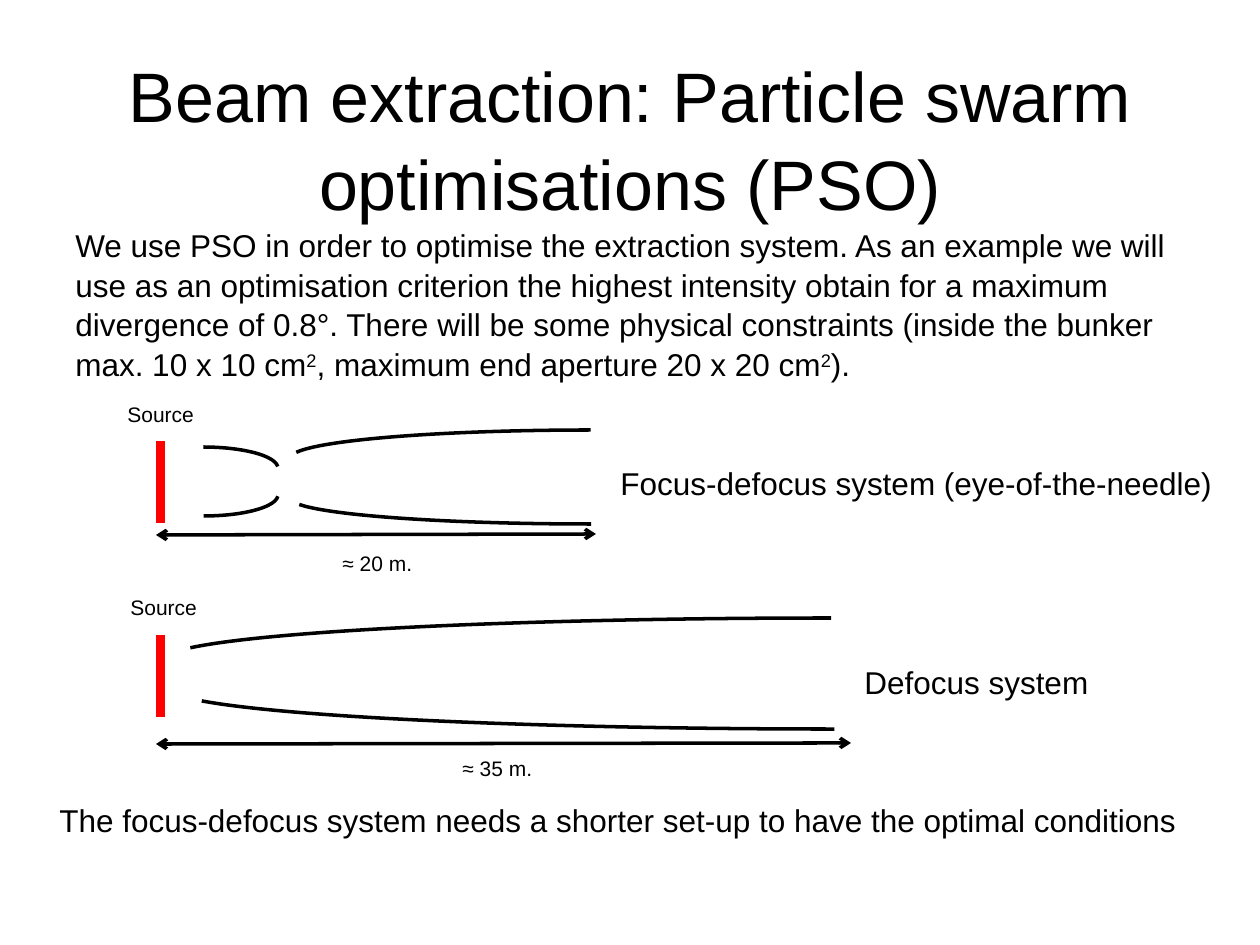
from lxml import etree
from pptx import Presentation, util as u
from pptx.dml.color import RGBColor
from pptx.enum import shapes, text
from pptx.oxml.ns import qn

PX = 914400 / 126
BLACK, WHITE, RED = "000000", "FFFFFF", "FF0000"

TITLE = "Beam extraction: Particle swarm optimisations (PSO)"
# (wording, is superscript)
INTRO = [
    ("We use PSO in order to optimise the extraction system. As an example we will "
     "use as an optimisation criterion the highest intensity obtain for a maximum "
     "divergence of 0.8°. There will be some physical constraints (inside the bunker "
     "max. 10 x 10 cm", False),
    ("2", True),
    (", maximum end aperture 20 x 20 cm", False),
    ("2", True),
    (").", False),
]
CONCLUSION = "The focus-defocus system needs a shorter set-up to have the optimal conditions"

# Boxes are left, top, width, height in px. A guide wall is the box of its
# ellipse, whether it is the upper wall, and whether it opens away from the source.
SYSTEMS = [
    dict(source=(156, 441, 9, 82), source_label=(115, 394, 93, 38),
         walls=[((129, 447, 149, 42), True, False),
                ((129, 474, 149, 42), False, False),
                ((291, 473, 600, 51), False, True),
                ((291, 430, 600, 55), True, True)],
         span=(156, 535, 596, 534),
         length="≈ 20 m.", length_box=(330, 543, 96, 38),
         name="Focus-defocus system (eye-of-the-needle)", name_box=(608, 456, 628, 51)),
    dict(source=(156, 635, 9, 82), source_label=(118, 587, 93, 38),
         walls=[((168, 647, 1333, 82), False, True),
                ((165, 618, 1333, 82), True, True)],
         span=(156, 744, 851, 743),
         length="≈ 35 m.", length_box=(450, 748, 96, 38),
         name="Defocus system", name_box=(852, 655, 252, 51)),
]
# Arc ends in units of 100000/60000 degree: top-right and bottom-right quarters
TOP_QUARTER, BOTTOM_QUARTER = (162, 215.3), (0.6, 53.6)


def emu(lengths):
    return [u.Emu(round(n * PX)) for n in lengths]


def rgb(value):
    return RGBColor.from_string(value)


def write(frame, runs, size, wrap=True):
    frame.word_wrap = wrap
    frame.vertical_anchor = text.MSO_ANCHOR.TOP
    paragraph = frame.paragraphs[0]
    paragraph.alignment = text.PP_ALIGN.LEFT
    paragraph.line_spacing = 1.05
    for wording, raised in runs:
        run = paragraph.add_run()
        run.text = wording
        run.font.size, run.font.name = u.Pt(size), "Arial"
        run.font.color.rgb = rgb(BLACK)
        if raised:
            run.font._element.set("baseline", "30000")
    return paragraph


def add_label(box, runs, size, wrap=True):
    if isinstance(runs, str):
        runs = [(runs, False)]
    return write(slide.shapes.add_textbox(*emu(box)).text_frame, runs, size, wrap)


def add_block(box, fill):
    block = slide.shapes.add_shape(shapes.MSO_SHAPE.RECTANGLE, *emu(box))
    block.shadow.inherit = False
    block.fill.solid()
    block.fill.fore_color.rgb = rgb(fill)
    block.line.fill.background()
    return block


def add_wall(box, upper, opening):
    wall = slide.shapes.add_shape(shapes.MSO_SHAPE.ARC, *emu(box))
    wall.shadow.inherit = False
    wall.fill.background()
    wall.line.color.rgb, wall.line.width = rgb(BLACK), u.Pt(2)
    # A half turn swaps the upper and lower quarters
    ends = TOP_QUARTER if upper != opening else BOTTOM_QUARTER
    wall.adjustments[0], wall.adjustments[1] = ends
    wall.rotation = 180 if opening else 0


def add_span(ends):
    span = slide.shapes.add_connector(shapes.MSO_CONNECTOR.STRAIGHT, *emu(ends))
    span.line.color.rgb, span.line.width = rgb(BLACK), u.Pt(2)
    for end in ("a:headEnd", "a:tailEnd"):
        etree.SubElement(span.line._ln, qn(end), type="arrow")
    etree.SubElement(span._element.spPr, qn("a:effectLst"))


prs = Presentation()
prs.slide_width, prs.slide_height = u.Inches(10), u.Inches(7.5)
slide = prs.slides.add_slide(prs.slide_layouts[6])

# Title and introduction
title = add_label((63, 38, 1134, 158), TITLE, 40)
title.alignment = text.PP_ALIGN.CENTER
slide.shapes[0].text_frame.margin_top = emu([10])[0]
add_label((63, 218, 1134, 165), INTRO, 18)

# Extraction systems
for system in SYSTEMS:
    add_block(system["source"], RED)
    add_label(system["source_label"], "Source", 12, wrap=False)
    for wall in system["walls"]:
        add_wall(*wall)
    add_span(system["span"])
    add_label(system["length_box"], system["length"], 12, wrap=False)
    add_label(system["name_box"], system["name"], 18)

# Conclusion
write(add_block((47, 793, 1182, 50), WHITE).text_frame, [(CONCLUSION, False)], 18)

prs.save("out.pptx")
